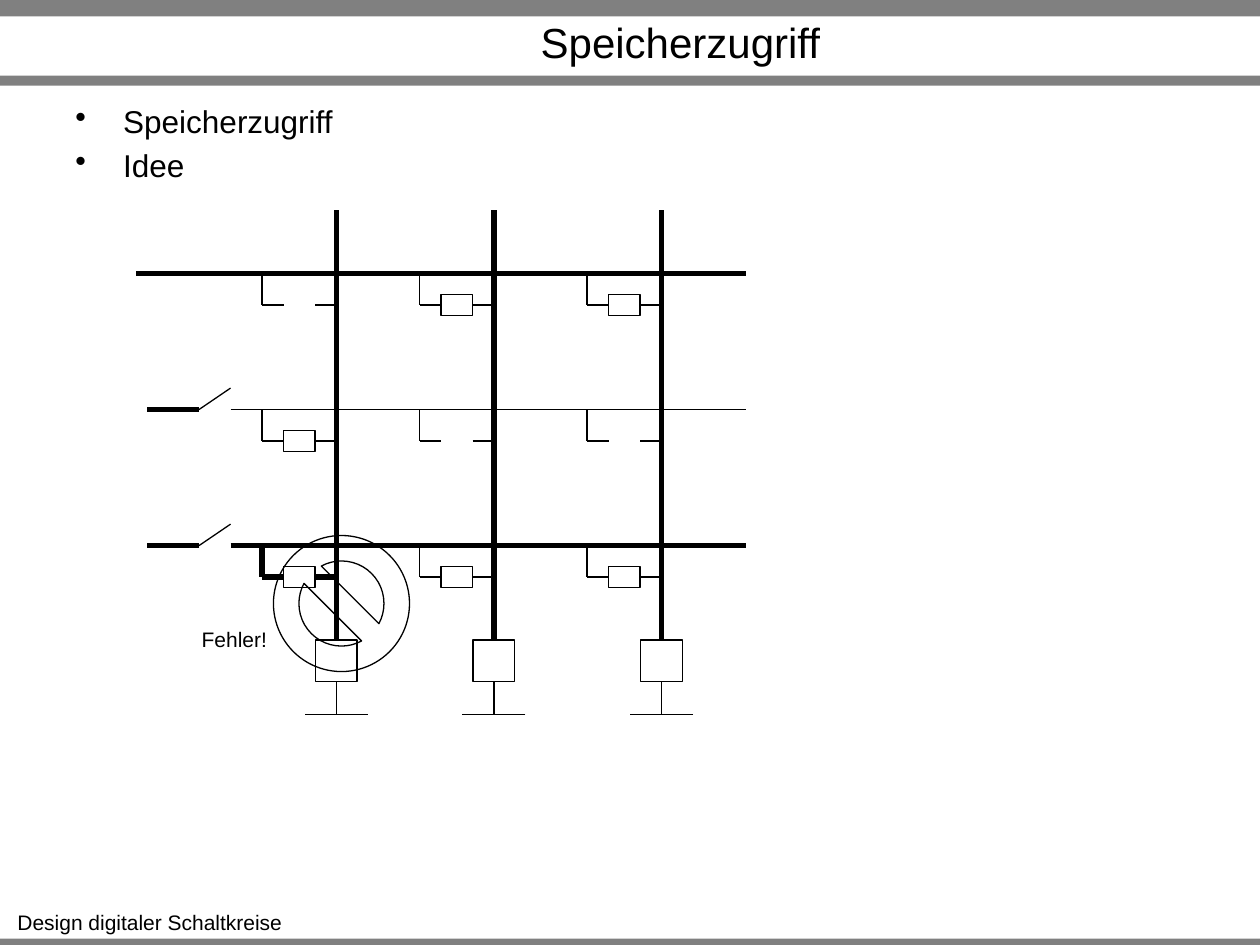
"""Build the slide showing a memory array whose read access fails."""
from typing import NamedTuple, Optional

import lxml.etree
import pptx
import pptx.dml.color
import pptx.enum.shapes
import pptx.enum.text
import pptx.oxml.ns
import pptx.util

Inches = pptx.util.Inches
Pt = pptx.util.Pt
Shapes = pptx.enum.shapes.MSO_SHAPE
Align = pptx.enum.text.PP_ALIGN
Anchor = pptx.enum.text.MSO_ANCHOR
qn = pptx.oxml.ns.qn

BLACK, GRAY = "000000", "808080"
THIN, THICK = 0.75, 3
COLUMNS = (2.67, 3.92, 5.25)
BIT_TOP, BOX_TOP, GROUND = 1.67, 5.08, 5.67
BOX_SIZE = 0.33
RESISTOR_WIDTH, RESISTOR_HEIGHT, DROP = 0.25, 0.17, 0.25


class Box(NamedTuple):
    left: float
    top: float
    width: float
    height: float


class Segment(NamedTuple):
    start: float
    end: float
    width: float
    rise: float = 0


class WordLine(NamedTuple):
    y: float
    segments: tuple[Segment, ...]
    resistors: tuple[bool, ...]
    widths: tuple[float, ...]


class Label(NamedTuple):
    box: Box
    lines: tuple[str, ...]
    size: float
    align: Align = Align.CENTER
    anchor: Anchor = Anchor.TOP
    wrap: bool = True
    bulleted: bool = False


BARS = (Box(0, 7.45, 10, 0.08), Box(0, 0, 10, 0.13), Box(0, 0.6, 10, 0.08))

WORD_LINES = (
    WordLine(2.17, (Segment(1.08, 1.5, THICK), Segment(1.5, 1.83, THICK), Segment(1.75, 5.92, THICK)),
             (False, True, True), (THIN, THIN, THIN)),
    WordLine(3.25, (Segment(1.17, 1.58, THICK), Segment(1.58, 1.83, THIN, 0.17), Segment(1.83, 5.92, THIN)),
             (True, False, False), (THIN, THIN, THIN)),
    WordLine(4.33, (Segment(1.17, 1.58, THICK), Segment(1.58, 1.83, THIN, 0.17), Segment(1.83, 5.92, THICK)),
             (True, True, True), (THICK, THIN, THIN)),
)

LABELS = (
    Label(Box(0.03, 7.17, 2.32, 0.3), ("Design digitaler Schaltkreise",), 12, wrap=False),
    Label(Box(1.3, 0.14, 8.2, 0.38), ("Speicherzugriff",), 24, anchor=Anchor.MIDDLE),
    Label(Box(0.5, 0.76, 9, 0.66), ("Speicherzugriff", "Idee"), 18, align=Align.LEFT, bulleted=True),
    Label(Box(1.5, 4.92, 0.72, 0.3), ("Fehler!",), 12, wrap=False),
)


def color(value: str) -> pptx.dml.color.RGBColor:
    return pptx.dml.color.RGBColor.from_string(value)


def add_shape(slide, kind: Shapes, box: Box, fill: Optional[str] = None):
    shape = slide.shapes.add_shape(kind, *map(Inches, box))
    shape.shadow.inherit = False
    if fill:
        shape.fill.solid()
        shape.fill.fore_color.rgb = color(fill)
        shape.line.fill.background()
    else:
        shape.fill.background()
        shape.line.color.rgb = color(BLACK)
        shape.line.width = Pt(THIN)
    return shape


def add_line(slide, x1: float, y1: float, x2: float, y2: float, width: float = THIN):
    line = slide.shapes.add_connector(
        pptx.enum.shapes.MSO_CONNECTOR.STRAIGHT, *map(Inches, (x1, y1, x2, y2)))
    line.line.color.rgb = color(BLACK)
    line.line.width = Pt(width)
    lxml.etree.SubElement(line._element.spPr, qn("a:effectLst"))
    return line


def add_label(slide, label: Label) -> None:
    shape = slide.shapes.add_textbox(*map(Inches, label.box))
    text_frame = shape.text_frame
    text_frame.text = "\n".join(label.lines)
    text_frame.word_wrap = label.wrap
    text_frame.vertical_anchor = label.anchor
    for index, paragraph in enumerate(text_frame.paragraphs):
        paragraph.alignment = label.align
        if index:
            paragraph.space_before = Pt(label.size * 0.2)
        if label.bulleted:
            properties = paragraph._p.get_or_add_pPr()
            properties.set("marL", str(Inches(0.38)))
            properties.set("indent", str(Inches(-0.38)))
            lxml.etree.SubElement(properties, qn("a:buChar")).set("char", "•")
        for run in paragraph.runs:
            run.font.name = "Arial"
            run.font.size = Pt(label.size)
            run.font.color.rgb = color(BLACK)


def add_cell(slide, column: float, row: float, has_resistor: bool, width: float) -> None:
    tap, left, right = column - 0.59, column - 0.42, column - 0.17
    y = row + DROP
    add_line(slide, tap, row, tap, y, width)
    left_lead = add_line(slide, tap, y, left, y, width)
    right_lead = add_line(slide, right, y, column, y, width)
    if has_resistor:
        box = Box(left, y - RESISTOR_HEIGHT / 2, RESISTOR_WIDTH, RESISTOR_HEIGHT)
        resistor = add_shape(slide, Shapes.RECTANGLE, box)
        left_lead.end_connect(resistor, 1)
        right_lead.begin_connect(resistor, 3)


def add_bit_line(slide, column: float) -> None:
    bottom = BOX_TOP + BOX_SIZE
    box = add_shape(slide, Shapes.RECTANGLE, Box(column - BOX_SIZE / 2, BOX_TOP, BOX_SIZE, BOX_SIZE))
    add_line(slide, column, BIT_TOP, column, BOX_TOP, THICK).end_connect(box, 0)
    add_line(slide, column, bottom, column, GROUND).begin_connect(box, 2)
    add_line(slide, column + 0.25, GROUND, column - 0.25, GROUND)


def main() -> None:
    presentation = pptx.Presentation()
    presentation.slide_width = Inches(10)
    presentation.slide_height = Inches(7.5)
    slide = presentation.slides.add_slide(presentation.slide_layouts[6])
    for bar in BARS:
        add_shape(slide, Shapes.RECTANGLE, bar, GRAY)
    for word_line in WORD_LINES:
        y = word_line.y
        for segment in word_line.segments:
            add_line(slide, segment.start, y, segment.end, y - segment.rise, segment.width)
        for column, has_resistor, width in zip(COLUMNS, word_line.resistors, word_line.widths):
            add_cell(slide, column, y, has_resistor, width)
    for column in COLUMNS:
        add_bit_line(slide, column)
    add_shape(slide, Shapes.NO_SYMBOL, Box(2.17, 4.25, 1.08, 1.08))
    for label in LABELS:
        add_label(slide, label)
    presentation.save("out.pptx")


if __name__ == "__main__":
    main()
